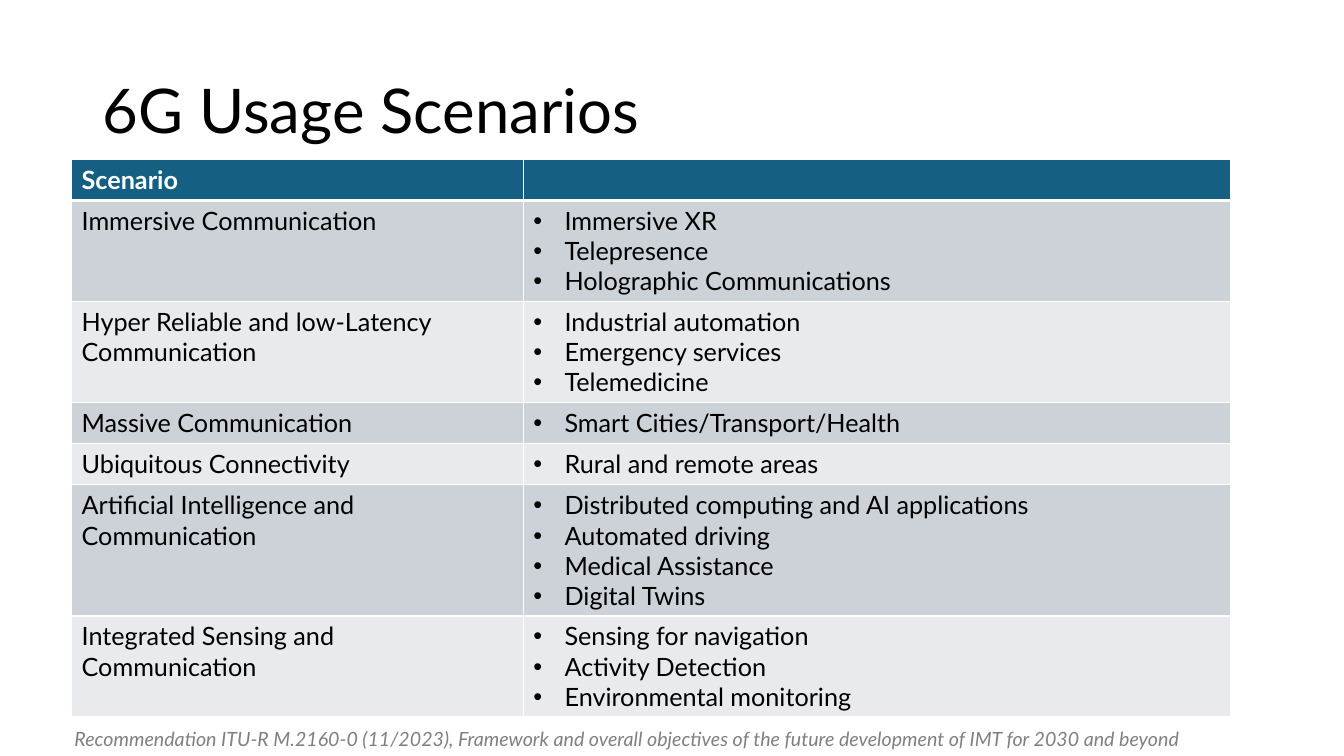
import pptx
import pptx.util
import pptx.dml.color
import pptx.enum.text
import pptx.oxml.ns
import lxml.etree

RGB = pptx.dml.color.RGBColor
BLACK = RGB(0x00, 0x00, 0x00)
WHITE = RGB(0xFF, 0xFF, 0xFF)
GREY = RGB(0x80, 0x80, 0x80)
TEAL = RGB(0x15, 0x60, 0x82)
BANDS = [RGB(0xCC, 0xD2, 0xD8), RGB(0xE8, 0xEA, 0xED)]

ROWS = [
    ("Immersive Communication",
     ["Immersive XR", "Telepresence", "Holographic Communications"]),
    ("Hyper Reliable and low-Latency Communication",
     ["Industrial automation", "Emergency services", "Telemedicine"]),
    ("Massive Communication", ["Smart Cities/Transport/Health"]),
    ("Ubiquitous Connectivity", ["Rural and remote areas"]),
    ("Artificial Intelligence and Communication",
     ["Distributed computing and AI applications", "Automated driving",
      "Medical Assistance", "Digital Twins"]),
    ("Integrated Sensing and Communication",
     ["Sensing for navigation", "Activity Detection",
      "Environmental monitoring"]),
]


def px(n):
    """100 px make one inch."""
    return pptx.util.Emu(n * 9144)


def sub(node, tag, **attrs):
    return lxml.etree.SubElement(node, pptx.oxml.ns.qn(tag), attrs)


def write(frame, lines, size=18, color=BLACK, font="Lato", bold=False,
          italic=False, bullet=False, space=None):
    """Fill a text frame with one paragraph for each line."""
    for i, line in enumerate(lines):
        para = frame.add_paragraph() if i else frame.paragraphs[0]
        para.alignment = pptx.enum.text.PP_ALIGN.LEFT
        para.line_spacing = space
        if bullet:
            props = para._p.get_or_add_pPr()
            props.set("marL", str(px(31)))
            props.set("indent", str(-px(31)))
            sub(props, "a:buFont", typeface="Arial")
            sub(props, "a:buChar", char="•")
        run = para.add_run()
        run.text = line
        run.font.name = font
        run.font.size = pptx.util.Pt(size)
        run.font.bold = bold
        run.font.italic = italic
        run.font.color.rgb = color


class Deck:
    def __init__(self):
        self.prs = pptx.Presentation()
        self.prs.slide_width = px(1333)
        self.prs.slide_height = px(750)
        self.slide = self.prs.slides.add_slide(self.prs.slide_layouts[5])

    def title(self, text, x, y, w, h):
        box = self.slide.shapes.title
        box.left, box.top, box.width, box.height = map(px, (x, y, w, h))
        frame = box.text_frame
        frame.vertical_anchor = pptx.enum.text.MSO_ANCHOR.MIDDLE
        write(frame, [text], size=44, space=0.9)

    def note(self, text, x, y, w, h):
        box = self.slide.shapes.add_textbox(*map(px, (x, y, w, h)))
        box.text_frame.word_wrap = True
        write(box.text_frame, [text], size=14, color=GREY, italic=True)

    def cell(self, cell, lines, fill, top=1, low=1, **style):
        cell.fill.solid()
        cell.fill.fore_color.rgb = fill
        write(cell.text_frame, lines, **style)
        # Borders go ahead of the fill
        props = cell._tc.get_or_add_tcPr()
        sides = [("L", 1), ("R", 1), ("T", top), ("B", low)]
        for i, (side, width) in enumerate(sides):
            line = sub(props, "a:ln" + side, w=str(pptx.util.Pt(width)))
            sub(sub(line, "a:solidFill"), "a:srgbClr", val=str(WHITE))
            props.insert(i, line)

    def table(self, rows, x, y, cols):
        # Each row is as tall as its list of uses
        sizes = [41] + [max(41, 10 + 30 * len(uses)) for _, uses in rows]
        grid = self.slide.shapes.add_table(
            len(sizes), len(cols), px(x), px(y),
            px(sum(cols)), px(sum(sizes))).table
        for col, width in zip(grid.columns, cols):
            col.width = px(width)
        for row, height in zip(grid.rows, sizes):
            row.height = px(height)
        # Header
        for c, lines in enumerate([["Scenario"], []]):
            self.cell(grid.cell(0, c), lines, TEAL, low=3,
                      color=WHITE, bold=True)
        # Body
        for r, (name, uses) in enumerate(rows, 1):
            fill = BANDS[(r - 1) % 2]
            top = 3 if r == 1 else 1
            self.cell(grid.cell(r, 0), [name], fill, top)
            self.cell(grid.cell(r, 1), uses, fill, top, bullet=True)


def main():
    deck = Deck()
    deck.title("6G Usage Scenarios", 92, 40, 1150, 145)
    deck.table(ROWS, 71, 158, [448, 702])
    deck.note("Recommendation ITU-R M.2160-0 (11/2023), Framework and overall "
              "objectives of the future development of IMT for 2030 and beyond",
              64, 716, 1205, 34)
    deck.prs.save("out.pptx")


if __name__ == "__main__":
    main()
